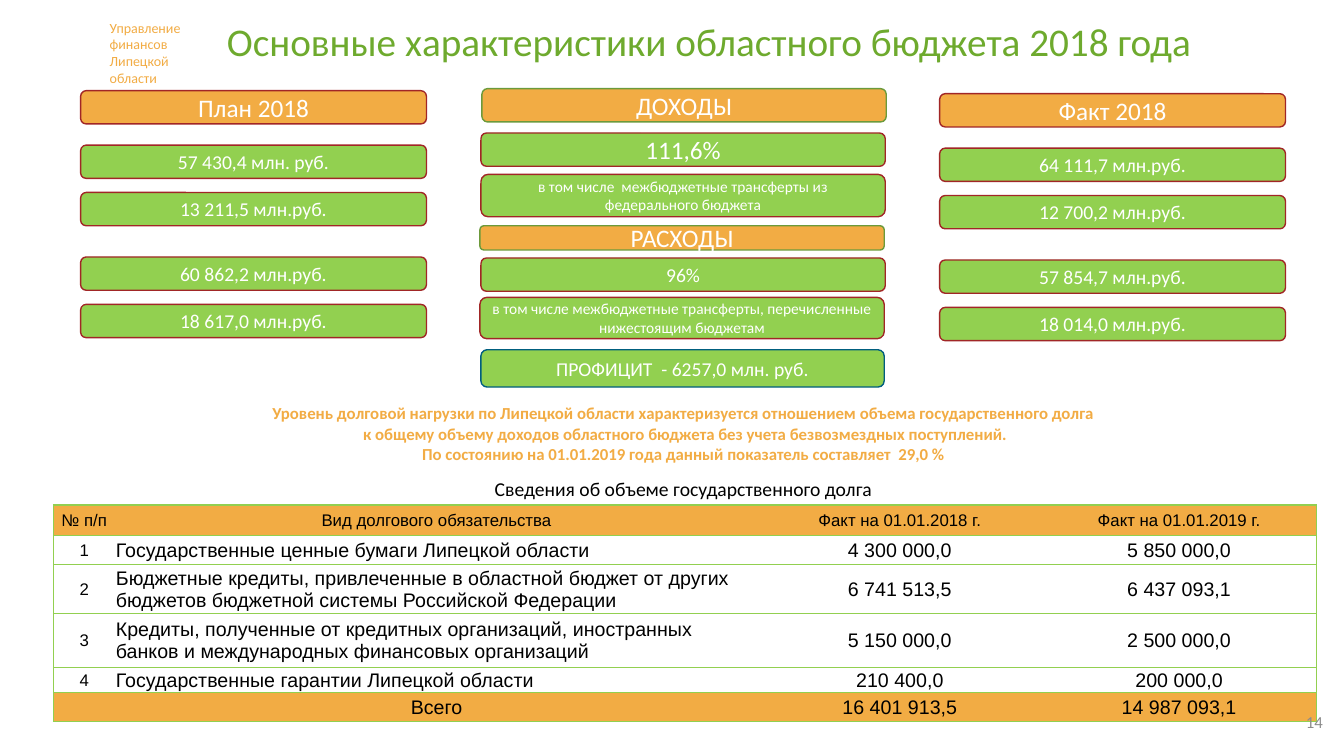
from dataclasses import dataclass

from lxml import etree
from pptx import Presentation
from pptx.dml.color import RGBColor
from pptx.enum.shapes import MSO_SHAPE
from pptx.enum.text import MSO_ANCHOR, MSO_AUTO_SIZE, PP_ALIGN
from pptx.oxml.ns import qn
from pptx.slide import Slide
from pptx.table import _Cell
from pptx.text.text import TextFrame
from pptx.util import Inches, Pt

ROUNDED = MSO_SHAPE.ROUNDED_RECTANGLE
RECTANGLE = MSO_SHAPE.RECTANGLE
LEFT, CENTER, RIGHT = PP_ALIGN.LEFT, PP_ALIGN.CENTER, PP_ALIGN.RIGHT
TOP, MIDDLE = MSO_ANCHOR.TOP, MSO_ANCHOR.MIDDLE
NO_AUTOFIT = MSO_AUTO_SIZE.NONE
TITLE_ONLY_LAYOUT = 5


@dataclass(frozen=True)
class Theme:
    orange: str = "F2AC44"
    green: str = "92D050"
    title_green: str = "6EAA2E"
    olive: str = "6C9A3B"
    red: str = "A12626"
    blue: str = "005E7F"
    white: str = "FFFFFF"
    black: str = "000000"
    gray: str = "8C8C8C"
    body_font: str = "Calibri"
    table_font: str = "Arial"
    title_size: int = 28
    heading_size: int = 18
    value_size: int = 14
    small_size: int = 12
    detail_size: int = 11
    office_size: int = 10


THEME = Theme()


@dataclass(frozen=True)
class Area:
    left: float
    top: float
    width: float
    height: float

    def lengths(self) -> tuple:
        return tuple(Inches(v) for v in (self.left, self.top, self.width, self.height))


@dataclass(frozen=True)
class Badge:
    text: str
    area: Area
    size: int = THEME.value_size
    fill: str = THEME.green
    line: str = THEME.red


# Side columns: a heading, then four amounts at shared heights
SIDE_TOPS = (0.9, 1.44, 1.91, 2.55, 3.02)
SIDE_WIDTH, SIDE_HEIGHT = 3.43, 0.33
PLAN = ("План 2018", "57 430,4 млн. руб.", "13 211,5 млн.руб.",
        "60 862,2 млн.руб.", "18 617,0 млн.руб.")
FACT = ("Факт 2018", "64 111,7 млн.руб.", "12 700,2 млн.руб.",
        "57 854,7 млн.руб.", "18 014,0 млн.руб.")

MIDDLE_BADGES = (
    Badge("ДОХОДЫ", Area(4.78, 0.88, 4.01, 0.33), THEME.heading_size, THEME.orange, THEME.olive),
    Badge("111,6%", Area(4.77, 1.32, 4.01, 0.33), THEME.heading_size),
    Badge("в том числе  межбюджетные трансферты из федерального бюджета",
          Area(4.77, 1.73, 4.01, 0.42), THEME.detail_size),
    Badge("РАСХОДЫ", Area(4.76, 2.24, 4.01, 0.24), THEME.heading_size, THEME.orange, THEME.olive),
    Badge("96%", Area(4.77, 2.56, 4.01, 0.33)),
    Badge("в том числе межбюджетные трансферты, перечисленные нижестоящим бюджетам",
          Area(4.76, 2.95, 4.01, 0.41), THEME.detail_size),
    Badge("ПРОФИЦИТ  - 6257,0 млн. руб.", Area(4.77, 3.47, 4.0, 0.37), line=THEME.blue),
)

DEBT_NOTE = (
    "Уровень долговой нагрузки по Липецкой области характеризуется отношением объема "
    "государственного долга\n"
    " к общему объему доходов областного бюджета без учета безвозмездных поступлений.\n"
    "По состоянию на 01.01.2019 года данный показатель составляет  29,0 %"
)

DEBT_COLUMNS = (0.61, 6.38, 2.81, 2.73)
DEBT_HEIGHTS = (0.3, 0.29, 0.49, 0.53, 0.25, 0.24)
DEBT_ROWS = (
    ("№ п/п", "Вид долгового обязательства", "Факт на 01.01.2018 г.", "Факт на 01.01.2019 г."),
    ("1", "Государственные ценные бумаги Липецкой области", "4 300 000,0", "5 850 000,0"),
    ("2", "Бюджетные кредиты, привлеченные в областной бюджет от других бюджетов "
          "бюджетной системы Российской Федерации", "6 741 513,5", "6 437 093,1"),
    ("3", "Кредиты, полученные от кредитных организаций, иностранных банков и "
          "международных финансовых организаций", "5 150 000,0", "2 500 000,0"),
    ("4", "Государственные гарантии Липецкой области", "210 400,0", "200 000,0"),
    ("", "Всего", "16 401 913,5", "14 987 093,1"),
)


def write(frame: TextFrame, text: str, *, size: int, color: str, font: str = THEME.body_font,
          align: PP_ALIGN = CENTER, bold: bool = False, spacing: float = 1.0) -> None:
    for index, line in enumerate(text.split("\n")):
        para = frame.add_paragraph() if index else frame.paragraphs[0]
        para.alignment = align
        para.line_spacing = spacing
        span = para.add_run()
        span.text = line
        span.font.name = font
        span.font.size = Pt(size)
        span.font.bold = bold
        span.font.color.rgb = RGBColor.from_string(color)


def prepare(frame: TextFrame, anchor: MSO_ANCHOR) -> None:
    frame.word_wrap = True
    frame.auto_size = NO_AUTOFIT
    frame.vertical_anchor = anchor


def add_label(page: Slide, text: str, area: Area, *, anchor: MSO_ANCHOR = TOP, **style) -> None:
    box = page.shapes.add_textbox(*area.lengths())
    prepare(box.text_frame, anchor)
    write(box.text_frame, text, **style)


def add_badge(page: Slide, badge: Badge) -> None:
    box = page.shapes.add_shape(ROUNDED, *badge.area.lengths())
    box.shadow.inherit = False
    box.fill.solid()
    box.fill.fore_color.rgb = RGBColor.from_string(badge.fill)
    box.line.color.rgb = RGBColor.from_string(badge.line)
    box.line.width = Pt(1)
    prepare(box.text_frame, MIDDLE)
    write(box.text_frame, badge.text, size=badge.size, color=THEME.white)


def add_side(page: Slide, texts: tuple[str, ...], left: float, shift: float) -> None:
    for index, (text, top) in enumerate(zip(texts, SIDE_TOPS)):
        area = Area(left, top + shift, SIDE_WIDTH, SIDE_HEIGHT)
        if index == 0:
            add_badge(page, Badge(text, area, THEME.heading_size, THEME.orange))
        else:
            add_badge(page, Badge(text, area))


def set_borders(cell: _Cell, drawn: dict[str, bool]) -> None:
    properties = cell._tc.get_or_add_tcPr()
    for position, (side, visible) in enumerate(drawn.items()):
        line = etree.Element(qn(f"a:ln{side}"), w=str(Pt(1)))
        if visible:
            fill = etree.SubElement(line, qn("a:solidFill"))
            etree.SubElement(fill, qn("a:srgbClr"), val=THEME.green)
        else:
            etree.SubElement(line, qn("a:noFill"))
        properties.insert(position, line)


def add_debt_table(page: Slide) -> None:
    area = Area(0.53, 5.01, sum(DEBT_COLUMNS), sum(DEBT_HEIGHTS))
    table = page.shapes.add_table(len(DEBT_ROWS), len(DEBT_COLUMNS), *area.lengths()).table
    table.first_row = table.horz_banding = False
    for column, width in zip(table.columns, DEBT_COLUMNS):
        column.width = Inches(width)
    last_row, last_column = len(DEBT_ROWS) - 1, len(DEBT_COLUMNS) - 1
    for r, texts in enumerate(DEBT_ROWS):
        table.rows[r].height = Inches(DEBT_HEIGHTS[r])
        accent = r in (0, last_row)
        for c, text in enumerate(texts):
            cell = table.cell(r, c)
            cell.margin_left = cell.margin_top = cell.margin_right = Inches(0.01)
            cell.margin_bottom = 0
            cell.vertical_anchor = MIDDLE
            cell.fill.solid()
            cell.fill.fore_color.rgb = RGBColor.from_string(THEME.orange if accent else THEME.white)
            set_borders(cell, {"L": c == 0, "R": c == last_column, "T": True, "B": True})
            write(cell.text_frame, text, font=THEME.table_font, color=THEME.black,
                  size=THEME.small_size if r == 0 or c == 0 else THEME.value_size,
                  align=LEFT if c == 1 and not accent else CENTER)


def main() -> None:
    deck = Presentation()
    deck.slide_width, deck.slide_height = Inches(13.33), Inches(7.5)
    page = deck.slides.add_slide(deck.slide_layouts[TITLE_ONLY_LAYOUT])

    # Header
    add_label(page, "Управление финансов Липецкой области", Area(0.99, 0.14, 0.97, 0.77),
              size=THEME.office_size, color=THEME.orange, align=LEFT)
    title = page.shapes.title
    title.left, title.top, title.width, title.height = Area(2.1, 0.25, 9.86, 0.36).lengths()
    prepare(title.text_frame, MIDDLE)
    write(title.text_frame, "Основные характеристики областного бюджета 2018 года",
          size=THEME.title_size, color=THEME.title_green, spacing=0.9)

    # Plan, budget items and fact
    add_side(page, PLAN, left=0.8, shift=0)
    for badge in MIDDLE_BADGES:
        add_badge(page, badge)
    add_side(page, FACT, left=9.32, shift=0.03)

    # State debt
    add_label(page, DEBT_NOTE, Area(0.66, 3.95, 12.24, 0.71),
              size=THEME.small_size, color=THEME.orange, bold=True)
    add_label(page, "Сведения об объеме государственного долга", Area(0.66, 4.68, 12.24, 0.34),
              size=THEME.value_size, color=THEME.black)
    add_debt_table(page)

    # Page number
    add_label(page, "14", Area(10.11, 6.96, 3.11, 0.4), anchor=MIDDLE,
              size=THEME.small_size, color=THEME.gray, align=RIGHT)

    deck.save("out.pptx")


if __name__ == "__main__":
    main()
